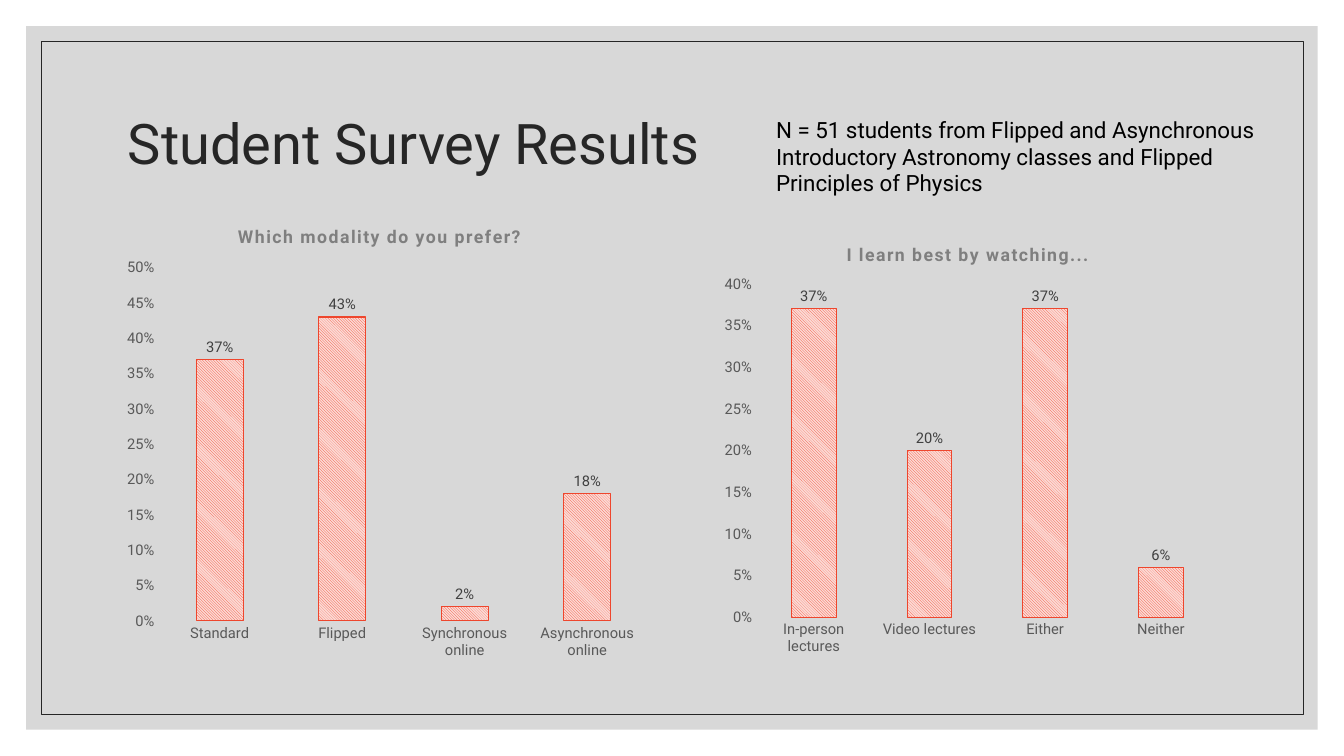
from dataclasses import dataclass
from typing import Any, Optional

from pptx import Presentation
from pptx import oxml
from pptx import util as u
from pptx.chart.data import CategoryChartData
from pptx.dml.color import RGBColor
from pptx.enum import chart as ch, dml, shapes, text
from pptx.oxml import ns

WIDE, HIGH = u.Inches(13.33), u.Inches(7.5)
FACE = "Roboto"
HUES = {
    "panel": "BFBFBF", "ink": "262626", "note": "000000", "axis": "595959",
    "label": "404040", "head": "7F7F7F", "bar": "EE462D", "pale": "FCDAD5",
}


@dataclass(frozen=True)
class Box:
    """Place and size, in percent of the slide."""
    x: float
    y: float
    w: float
    h: float

    def emu(self) -> tuple[int, int, int, int]:
        return (int(WIDE * self.x / 100), int(HIGH * self.y / 100),
                int(WIDE * self.w / 100), int(HIGH * self.h / 100))


@dataclass(frozen=True)
class Words:
    box: Box
    text: str
    size: float
    hue: str
    anchor: Any
    pitch: float


@dataclass(frozen=True)
class Survey:
    """Bar chart; plot and head are shares of the chart's own size."""
    box: Box
    title: str
    votes: dict[str, float]
    top: float
    plot: tuple[float, ...]
    head: tuple[float, ...]


TEXTS = [
    Words(Box(8.78, 9.33, 82.52, 20), "Student Survey Results", 40, "ink",
          text.MSO_ANCHOR.MIDDLE, 0.9),
    Words(Box(57.01, 14.67, 38.26, 12.13),
          "N = 51 students from Flipped and Asynchronous Introductory "
          "Astronomy classes and Flipped Principles of Physics",
          16, "note", text.MSO_ANCHOR.TOP, 1.0),
]
SURVEYS = [
    Survey(Box(8.55, 26.8, 40.51, 61.47), "Which modality do you prefer?",
           {"Standard": 0.37, "Flipped": 0.43, "Synchronous online": 0.02,
            "Asynchronous online": 0.18},
           0.5, (0.08, 0.14, 0.9, 0.76), (0.22, 0.04)),
    Survey(Box(53.19, 29.33, 38.26, 58.8), "I learn best by watching...",
           {"In-person lectures": 0.37, "Video lectures": 0.2,
            "Either": 0.37, "Neither": 0.06},
           0.4, (0.08, 0.14, 0.9, 0.75), (0.25, 0.04)),
]


def rgb(hue: str) -> RGBColor:
    return RGBColor.from_string(HUES[hue])


def style(font: Any, size: float, hue: str, bold: bool = False) -> None:
    font.name, font.size, font.bold = FACE, u.Pt(size), bold
    font.color.rgb = rgb(hue)


def inset(x: float, y: float) -> Box:
    """Box with equal margins on opposite sides."""
    return Box(x, y, 100 - 2 * x, 100 - 2 * y)


def pane(slide: Any, box: Box, fill: Optional[str], line: Optional[str]) -> None:
    shape = slide.shapes.add_shape(shapes.MSO_SHAPE.RECTANGLE, *box.emu())
    shape.shadow.inherit = False
    if fill:
        shape.fill.solid()
        shape.fill.fore_color.rgb = rgb(fill)
        tint = shape.fill._xPr.find(".//" + ns.qn("a:srgbClr"))
        tint.append(oxml.parse_xml(f'<a:alpha {ns.nsdecls("a")} val="60000"/>'))
    else:
        shape.fill.background()
    if line:
        shape.line.color.rgb = rgb(line)
        shape.line.width = u.Pt(0.5)
    else:
        shape.line.fill.background()


def write(slide: Any, words: Words) -> None:
    frame = slide.shapes.add_textbox(*words.box.emu()).text_frame
    frame.word_wrap = True
    frame.vertical_anchor = words.anchor
    frame.text = words.text
    para = frame.paragraphs[0]
    para.line_spacing = words.pitch
    style(para.runs[0].font, words.size, words.hue)


def pin(node: Any, index: int, shares: tuple[float, ...], inner: bool) -> None:
    """Give a chart part a manual layout."""
    for old in node.findall(ns.qn("c:layout")):
        node.remove(old)
    parts = '<c:layoutTarget val="inner"/>' if inner else ""
    parts += '<c:xMode val="edge"/><c:yMode val="edge"/>'
    parts += "".join(f'<c:{k} val="{v}"/>' for k, v in zip("xywh", shares))
    node.insert(index, oxml.parse_xml(
        f'<c:layout {ns.nsdecls("c")}><c:manualLayout>{parts}'
        "</c:manualLayout></c:layout>"))


def head(chart: Any, survey: Survey) -> None:
    title = chart.chart_title
    title.text_frame.text = survey.title
    run = title.text_frame.paragraphs[0].runs[0]
    style(run.font, 12.6, "head", True)
    run.font._element.set("spc", "100")
    title.include_in_layout = False
    pin(title._element, 1, survey.head, False)


def draw(slide: Any, survey: Survey) -> None:
    data = CategoryChartData(number_format="0%")
    data.categories = list(survey.votes)
    data.add_series("Series 1", list(survey.votes.values()))
    chart = slide.shapes.add_chart(
        ch.XL_CHART_TYPE.COLUMN_CLUSTERED, *survey.box.emu(), data).chart
    style(chart.font, 10.5, "note")
    chart.has_legend = False
    head(chart, survey)

    for axis in (chart.category_axis, chart.value_axis):
        axis.has_major_gridlines = False
        axis.major_tick_mark = axis.minor_tick_mark = ch.XL_TICK_MARK.NONE
        axis.format.line.fill.background()
        style(axis.tick_labels.font, 10.5, "axis")
    scale = chart.value_axis
    scale.minimum_scale, scale.maximum_scale = 0, survey.top
    scale.major_unit = 0.05
    scale.tick_labels.number_format = "0%"
    scale.tick_labels.number_format_is_linked = False

    plot = chart.plots[0]
    plot.gap_width = 160
    plot.vary_by_categories = False
    bars = plot.series[0]
    bars.invert_if_negative = False
    fill = bars.format.fill
    fill.patterned()
    fill.pattern = dml.MSO_PATTERN.LIGHT_DOWNWARD_DIAGONAL
    fill.fore_color.rgb, fill.back_color.rgb = rgb("bar"), rgb("pale")
    bars.format.line.color.rgb = rgb("bar")
    bars.format.line.width = u.Pt(0.75)

    tags = bars.data_labels
    tags.show_value = True
    tags.number_format, tags.number_format_is_linked = "0%", False
    tags.position = ch.XL_LABEL_POSITION.OUTSIDE_END
    style(tags.font, 10.5, "label")
    pin(chart._chartSpace.find(".//" + ns.qn("c:plotArea")), 0, survey.plot, True)


def main() -> None:
    deck = Presentation()
    deck.slide_width, deck.slide_height = WIDE, HIGH
    slide = deck.slides.add_slide(deck.slide_layouts[6])
    pane(slide, inset(1.95, 3.47), "panel", None)
    pane(slide, inset(3.05, 5.47), None, "ink")
    for words in TEXTS:
        write(slide, words)
    for survey in SURVEYS:
        draw(slide, survey)
    deck.save("out.pptx")


if __name__ == "__main__":
    main()
